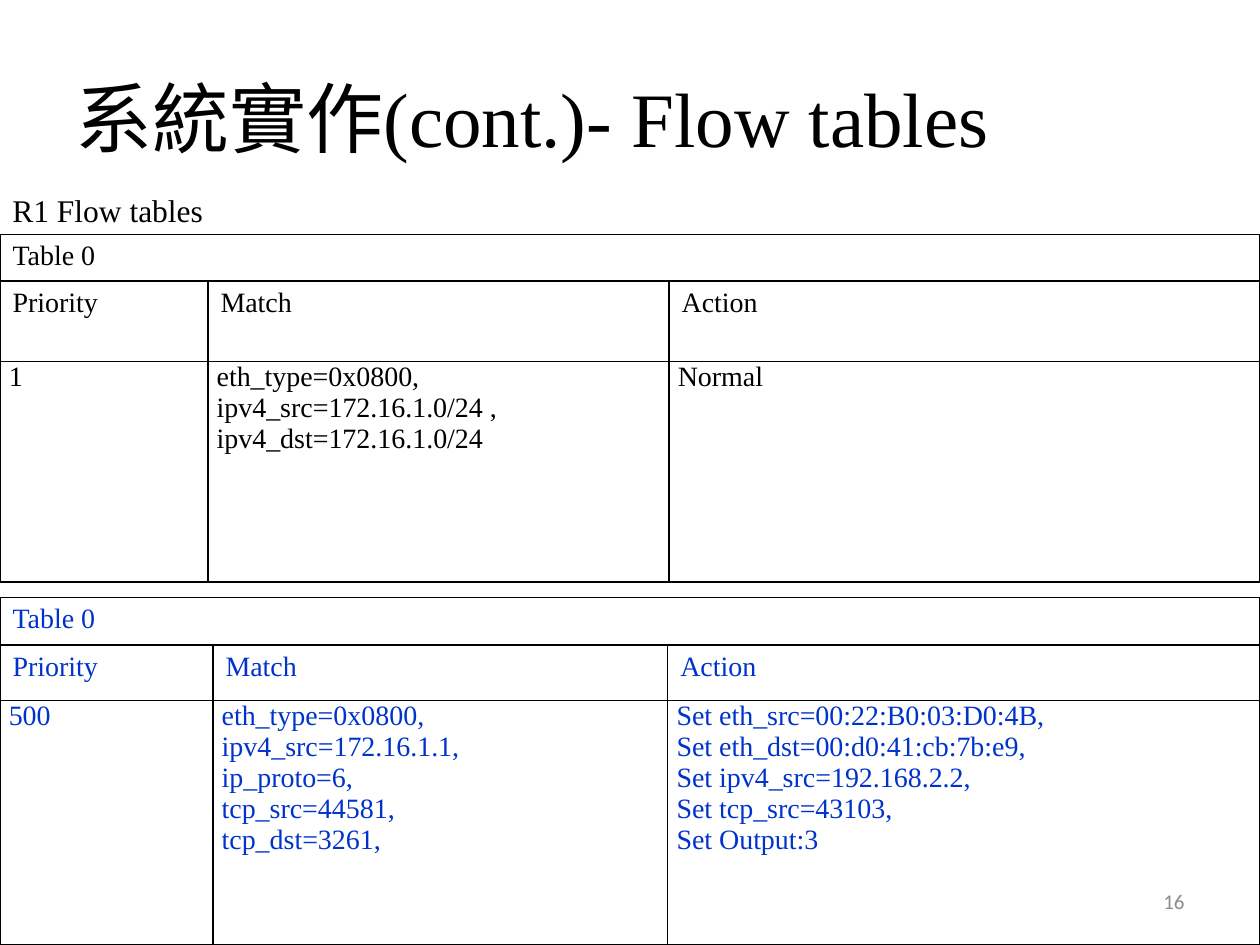
from lxml.etree import SubElement
from pptx import Presentation
from pptx.dml.color import RGBColor
from pptx.enum.text import MSO_ANCHOR as Anchor, PP_ALIGN as Align
from pptx.oxml.ns import qn
from pptx.util import Inches, Pt

COLORS = {"black": "000000", "blue": "0033CC", "gray": "8C8C8C"}
SERIF = "Times New Roman"
WIDTH, HEIGHT = 10, 7.5
HEADER = ["Priority", "Match", "Action"]


def style_font(paragraph, size, color, face=SERIF):
    font = paragraph.font
    font.size = Pt(size)
    font.name = face
    font.color.rgb = RGBColor.from_string(COLORS[color])


def add_label(slide, text, box, size, color="black", face=SERIF,
              align=Align.LEFT, anchor=Anchor.MIDDLE, wrap=True):
    label = slide.shapes.add_textbox(*map(Inches, box))
    frame = label.text_frame
    frame.word_wrap = wrap
    frame.vertical_anchor = anchor
    paragraph = frame.paragraphs[0]
    paragraph.text = text
    paragraph.alignment = align
    style_font(paragraph, size, color, face)


def add_borders(cell):
    properties = cell._tc.get_or_add_tcPr()
    for position, side in enumerate(("lnL", "lnR", "lnT", "lnB")):
        line = SubElement(properties, qn(f"a:{side}"), w=str(Pt(1)))
        fill = SubElement(line, qn("a:solidFill"))
        SubElement(fill, qn("a:srgbClr"), val=COLORS["black"])
        properties.insert(position, line)


def fill_cell(cell, lines, color, tight):
    if tight:
        cell.margin_left = cell.margin_right = Inches(0.07)
        cell.margin_top = cell.margin_bottom = 0
    cell.fill.background()
    frame = cell.text_frame
    for index, line in enumerate(lines):
        paragraph = frame.add_paragraph() if index else frame.paragraphs[0]
        paragraph.text = line
        style_font(paragraph, 16, color)
    add_borders(cell)


def add_flow_table(slide, top, columns, rows, rule, color):
    frame = slide.shapes.add_table(
        len(rows), len(columns), 0, Inches(top), Inches(WIDTH), Inches(sum(rows)))
    table = frame.table
    table.first_row = table.horz_banding = False
    for column, width in zip(table.columns, columns):
        column.width = Inches(width)
    for row, height in zip(table.rows, rows):
        row.height = Inches(height)
    content = [[["Table 0"], [""], [""]], [[name] for name in HEADER], rule]
    for r, row in enumerate(content):
        for c, lines in enumerate(row):
            fill_cell(table.cell(r, c), lines, color, tight=r == 2)
    table.cell(0, 0).merge(table.cell(0, len(columns) - 1))


def main():
    deck = Presentation()
    deck.slide_width, deck.slide_height = Inches(WIDTH), Inches(HEIGHT)
    slide = deck.slides.add_slide(deck.slide_layouts[6])

    margin = 0.05 * WIDTH
    add_label(slide, "系統實作(cont.)- Flow tables",
              (margin, 0.04 * HEIGHT, WIDTH - 2 * margin, 1.25), 44)
    add_label(slide, "16", (7.17, 6.95, 2.33, 0.4), 12, "gray", "Calibri", Align.RIGHT)

    normal_rule = [
        ["1"],
        ["eth_type=0x0800,", "ipv4_src=172.16.1.0/24 ,\nipv4_dst=172.16.1.0/24"],
        ["Normal"],
    ]
    rewrite_rule = [
        ["500"],
        ["eth_type=0x0800,", "ipv4_src=172.16.1.1,", "ip_proto=6,",
         "tcp_src=44581,", "tcp_dst=3261,"],
        ["Set eth_src=00:22:B0:03:D0:4B,", "Set eth_dst=00:d0:41:cb:7b:e9,",
         "Set ipv4_src=192.168.2.2,", "Set tcp_src=43103,", "Set Output:3"],
    ]
    add_flow_table(slide, 1.86, (1.65, 3.66, 4.69), (0.37, 0.64, 1.75),
                   normal_rule, "black")
    add_flow_table(slide, 4.74, (1.69, 3.61, 4.7), (0.38, 0.44, 1.94),
                   rewrite_rule, "blue")
    add_label(slide, "R1 Flow tables", (0, 1.47, 1.73, 0.4), 18,
              anchor=Anchor.TOP, wrap=False)
    deck.save("out.pptx")


if __name__ == "__main__":
    main()
